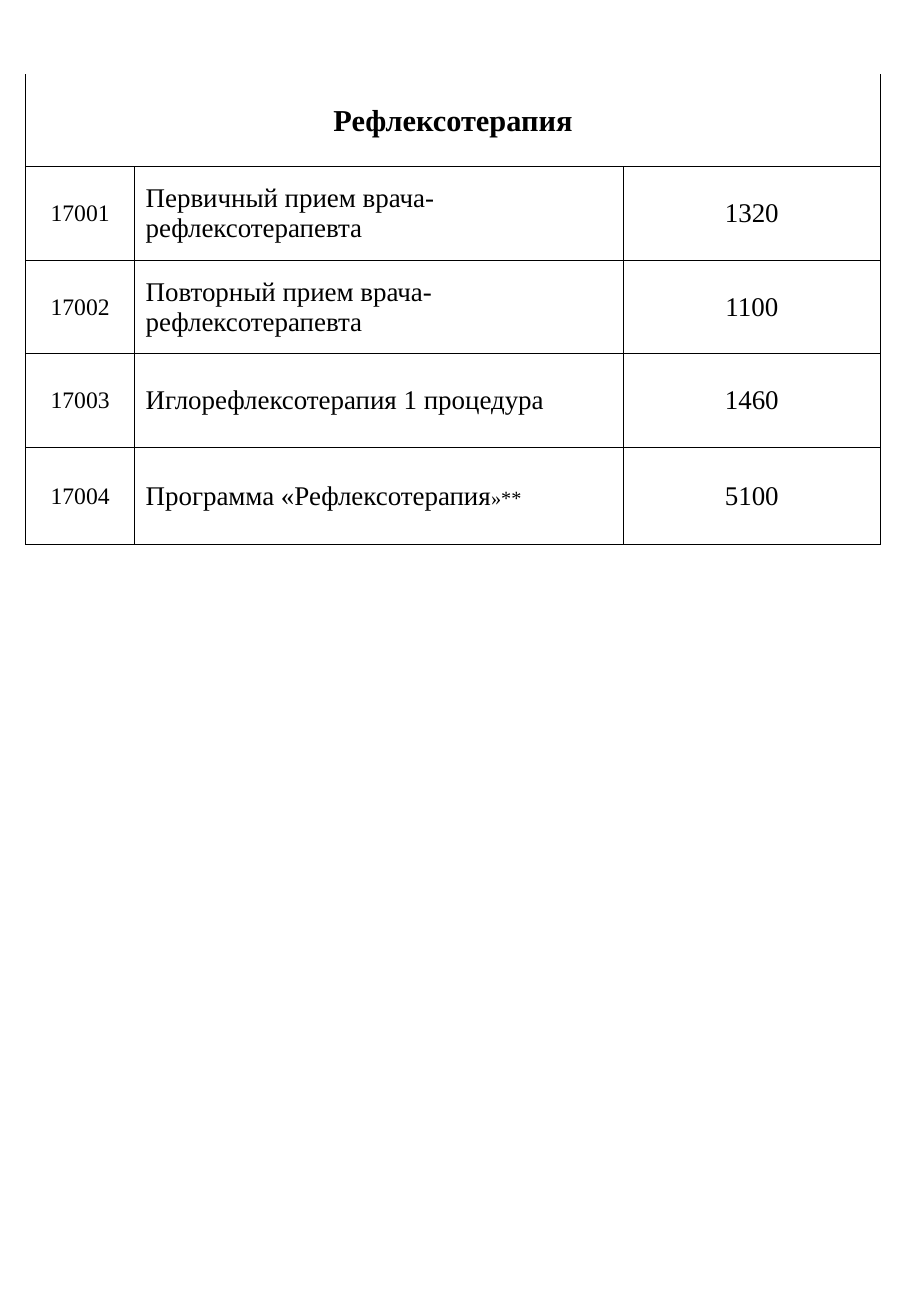
from lxml.etree import SubElement
from pptx import Presentation
from pptx.dml.color import RGBColor
from pptx.enum.text import MSO_ANCHOR, PP_ALIGN
from pptx.oxml.ns import qn
from pptx.util import Inches, Pt

HEADING = "Рефлексотерапия"
# code, service as (text, size) pieces, price
SERVICES = [
    ("17001", [("Первичный прием врача-рефлексотерапевта", 16)], "1320"),
    ("17002", [("Повторный прием врача- рефлексотерапевта", 16)], "1100"),
    ("17003", [("Иглорефлексотерапия 1 процедура", 16)], "1460"),
    ("17004", [("Программа «Рефлексотерапия", 16), ("»**", 12)], "5100"),
]

BLACK = RGBColor(0, 0, 0)
FONT = "Times New Roman"
LEFT, TOP = 0.21, 0.61
COLUMN_WIDTHS = [0.9, 4.02, 2.12]
ROW_HEIGHTS = [0.76, 0.77, 0.77, 0.77, 0.8]
SERVICE_INDENT = 0.08


def set_borders(cell, visible):
    """Draw the sides listed in visible (of L, R, T, B) and hide the others."""
    properties = cell._tc.get_or_add_tcPr()
    for side in "LRTB":
        line = SubElement(properties, qn(f"a:ln{side}"), w=str(Pt(0.5)))
        if side in visible:
            fill = SubElement(line, qn("a:solidFill"))
            SubElement(fill, qn("a:srgbClr"), val=str(BLACK))
        else:
            SubElement(line, qn("a:noFill"))


def fill_cell(cell, pieces, align, bold=False):
    cell.vertical_anchor = MSO_ANCHOR.MIDDLE
    cell.margin_left = cell.margin_right = cell.margin_top = Inches(0.01)
    cell.margin_bottom = 0
    paragraph = cell.text_frame.paragraphs[0]
    paragraph.alignment = align
    if align == PP_ALIGN.LEFT:
        paragraph._p.get_or_add_pPr().set("marL", str(Inches(SERVICE_INDENT)))
    for text, size in pieces:
        run = paragraph.add_run()
        run.text = text
        run.font.name = FONT
        run.font.size = Pt(size)
        run.font.bold = bold
        run.font.color.rgb = BLACK


def main():
    deck = Presentation()
    deck.slide_width, deck.slide_height = Inches(7.5), Inches(10.83)
    slide = deck.slides.add_slide(deck.slide_layouts[6])

    prices = slide.shapes.add_table(
        len(ROW_HEIGHTS), len(COLUMN_WIDTHS), Inches(LEFT), Inches(TOP),
        Inches(sum(COLUMN_WIDTHS)), Inches(sum(ROW_HEIGHTS))).table
    prices.first_row = prices.horz_banding = False
    for column, width in zip(prices.columns, COLUMN_WIDTHS):
        column.width = Inches(width)
    for index, (row, height) in enumerate(zip(prices.rows, ROW_HEIGHTS)):
        row.height = Inches(height)
        for cell in row.cells:
            set_borders(cell, "LRTB" if index else "LRB")
            cell.fill.background()

    heading = prices.cell(0, 0)
    heading.merge(prices.cell(0, len(COLUMN_WIDTHS) - 1))
    fill_cell(heading, [(HEADING, 18)], PP_ALIGN.CENTER, bold=True)

    for index, (code, service, price) in enumerate(SERVICES, start=1):
        fill_cell(prices.cell(index, 0), [(code, 14)], PP_ALIGN.CENTER)
        fill_cell(prices.cell(index, 1), service, PP_ALIGN.LEFT)
        fill_cell(prices.cell(index, 2), [(price, 16)], PP_ALIGN.CENTER)

    deck.save("out.pptx")


if __name__ == "__main__":
    main()
